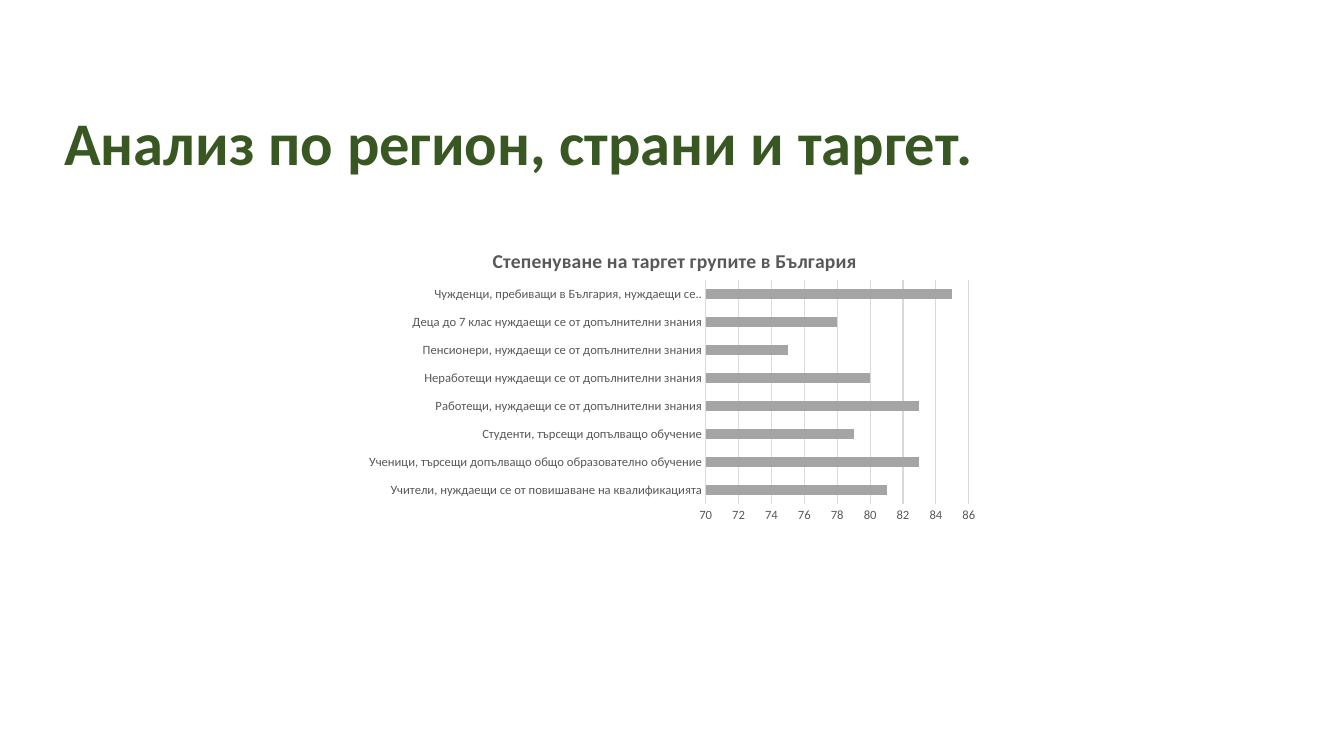
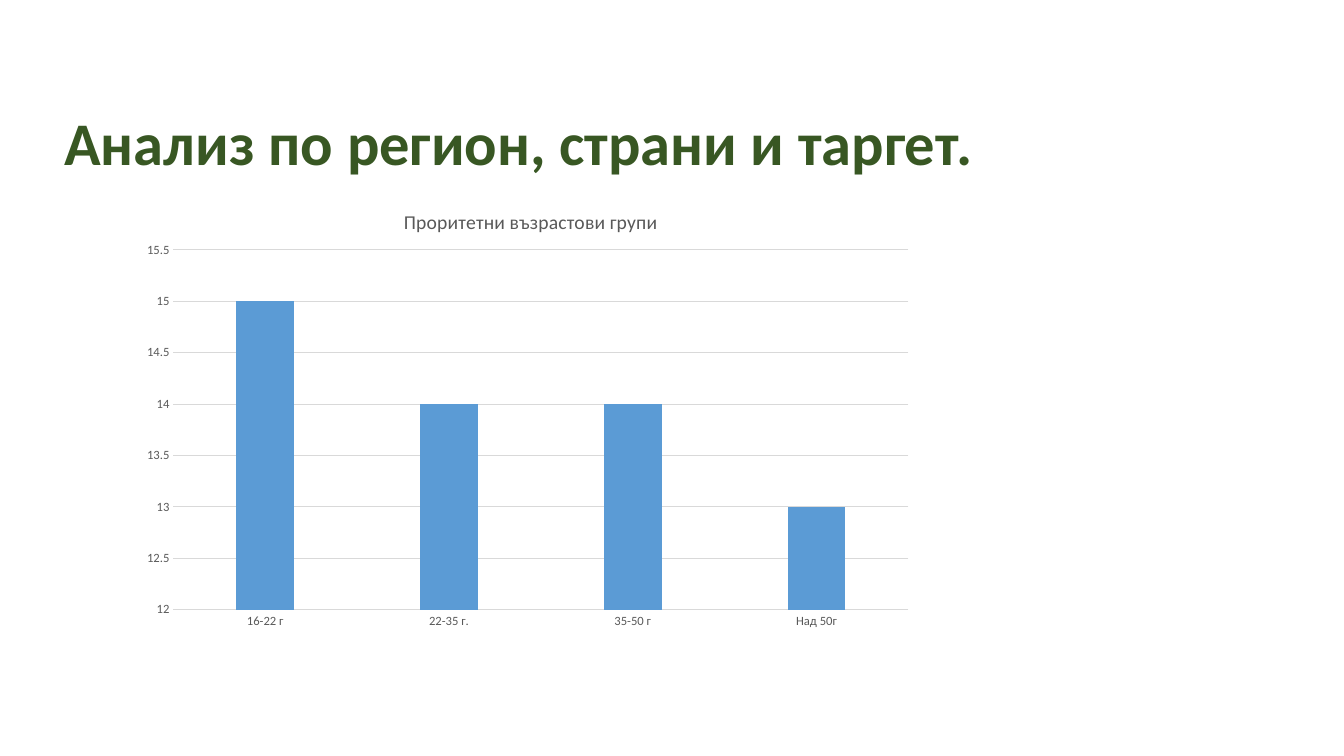
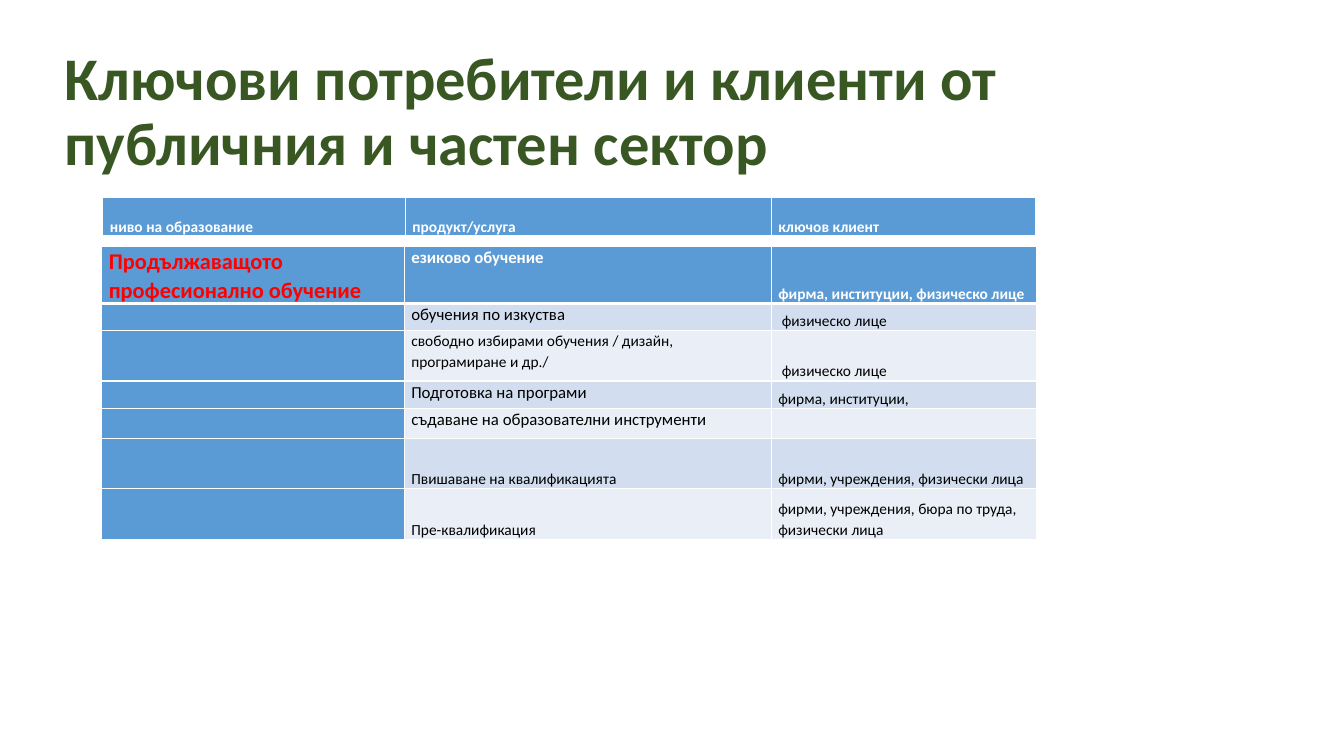
from pptx import Presentation
from pptx.chart.data import CategoryChartData
from pptx.dml.color import RGBColor
from pptx.enum.chart import XL_CHART_TYPE as ChartType, XL_TICK_MARK as TickMark
from pptx.enum.text import MSO_ANCHOR as Anchor
from pptx.oxml import parse_xml
from pptx.oxml.ns import nsdecls, qn
from pptx.util import Emu, Pt

PX = 9144  # 100 px to the inch
FONT = "Calibri"
COLORS = {
    "title": "385723", "white": "FFFFFF", "black": "000000", "red": "FF0000",
    "label": "595959", "grid": "D9D9D9", "gray": "A5A5A5", "blue": "5B9BD5",
    "band_dark": "D2DEEF", "band_light": "EAEFF7",
}
TITLE_BOX = (54, 100, 1113, 82)

CHART_SLIDES = [
    {
        "title": "Анализ по регион, страни и таргет.",
        "type": ChartType.BAR_CLUSTERED,
        "box": (354, 225, 626, 300),
        "plot": (700, 278, 261, 222),
        "caption": "Степенуване на таргет групите в България",
        "caption_at": (485, 242), "bold": True,
        "values": [
            ("Учители, нуждаещи се от повишаване на квалификацията", 81),
            ("Ученици, търсещи допълващо общо образователно обучение", 83),
            ("Студенти, търсещи допълващо обучение", 79),
            ("Работещи, нуждаещи се от допълнителни знания", 83),
            ("Неработещи нуждаещи се от допълнителни знания", 80),
            ("Пенсионери, нуждаещи се от допълнителни знания", 75),
            ("Деца до 7 клас нуждаещи се от допълнителни знания", 78),
            ("Чужденци, пребиващи в България, нуждаещи се..", 85),
        ],
        "scale": (70, 86, 2), "color": "gray", "gap": 182, "overlap": 0,
    },
    {
        "title": "Анализ по регион, страни и таргет.",
        "type": ChartType.COLUMN_CLUSTERED,
        "box": (130, 182, 787, 451),
        "plot": (172, 248, 729, 357),
        "caption": "Проритетни възрастови групи",
        "caption_at": (397, 203), "bold": False,
        "values": [("16-22 г", 15), ("22-35 г.", 14), ("35-50 г", 14), ("Над 50г", 13)],
        "scale": (12, 15.5, 0.5), "color": "blue", "gap": 219, "overlap": -27,
    },
]

TABLE_TITLE = "Ключови потребители и клиенти от публичния и частен сектор"
TOP, BOTTOM = Anchor.TOP, Anchor.BOTTOM
# A cell is (text, size, anchor).
EMPTY = ("", 11, BOTTOM)
TABLES = [
    {
        "at": (102, 196), "columns": (300, 363, 262), "heights": (39,),
        "rows": [[("ниво на образование", 11, BOTTOM), ("продукт/услуга", 11, BOTTOM),
                  ("ключов клиент", 11, BOTTOM)]],
    },
    {
        "at": (101, 244), "columns": (300, 364, 263),
        "heights": (48, 27, 50, 27, 30, 50, 50),
        "accent": "red",
        "rows": [
            [("Продължаващото професионално обучение", 16, BOTTOM),
             ("езиково обучение", 12, TOP),
             ("фирма, институции, физическо лице", 11, BOTTOM)],
            [EMPTY, ("обучения по изкуства", 12, TOP), (" физическо лице", 11, BOTTOM)],
            [EMPTY, ("свободно избирами обучения / дизайн, програмиране и др./", 11, TOP),
             (" физическо лице", 11, BOTTOM)],
            [EMPTY, ("Подготовка на програми", 12, TOP), ("фирма, институции,", 11, BOTTOM)],
            [EMPTY, ("съдаване на образователни инструменти", 12, TOP), EMPTY],
            [EMPTY, ("Пвишаване на квалификацията", 11, BOTTOM),
             ("фирми, учреждения, физически лица", 11, BOTTOM)],
            [EMPTY, ("Пре-квалификация", 11, BOTTOM),
             ("фирми, учреждения, бюра по труда, физически лица", 11, BOTTOM)],
        ],
    },
]


def px(*lengths):
    return [Emu(length * PX) for length in lengths]


def rgb(name):
    return RGBColor.from_string(COLORS[name])


def style_font(font, size, color, bold=False):
    font.name, font.size, font.bold = FONT, Pt(size), bold
    font.color.rgb = rgb(color)


def add_titled_slide(presentation, title):
    slide = presentation.slides.add_slide(presentation.slide_layouts[6])
    frame = slide.shapes.add_textbox(*px(*TITLE_BOX)).text_frame
    frame.word_wrap = True
    frame.vertical_anchor = BOTTOM
    paragraph = frame.paragraphs[0]
    paragraph.line_spacing = 0.9
    run = paragraph.add_run()
    run.text = title
    style_font(run.font, 43.2, "title", True)
    return slide


def set_layout(element, index, box, area, target=""):
    """Place a chart part at area (px on the slide) as fractions of the chart box."""
    old = element.find(qn("c:layout"))
    if old is not None:
        element.remove(old)
    left, top, width, height = box
    fractions = [("x", (area[0] - left) / width), ("y", (area[1] - top) / height)]
    if len(area) == 4:
        fractions += [("w", area[2] / width), ("h", area[3] / height)]
    modes = '<c:xMode val="edge"/><c:yMode val="edge"/>'
    places = "".join(f'<c:{key} val="{value:.4f}"/>' for key, value in fractions)
    element.insert(index, parse_xml(
        f'<c:layout {nsdecls("c")}><c:manualLayout>{target}{modes}{places}'
        "</c:manualLayout></c:layout>"))


def style_axis(axis):
    axis.major_tick_mark = axis.minor_tick_mark = TickMark.NONE
    style_font(axis.tick_labels.font, 9, "label")


def style_line(line):
    line.color.rgb = rgb("grid")
    line.width = Pt(0.75)


def add_bar_chart(slide, content):
    data = CategoryChartData()
    data.categories = [name for name, _ in content["values"]]
    data.add_series("Series 1", [value for _, value in content["values"]])
    box = content["box"]
    chart = slide.shapes.add_chart(content["type"], *px(*box), data).chart
    style_font(chart.font, 10, "black")
    chart.has_legend = False

    chart.has_title = True
    run = chart.chart_title.text_frame.paragraphs[0].add_run()
    run.text = content["caption"]
    style_font(run.font, 14, "label", content["bold"])
    chart.chart_title.include_in_layout = False
    title_element = chart.chart_title._element
    set_layout(title_element, 1, box, content["caption_at"])
    set_layout(chart._chartSpace.chart.plotArea, 0, box, content["plot"],
               '<c:layoutTarget val="inner"/>')

    style_axis(chart.category_axis)
    style_line(chart.category_axis.format.line)
    value_axis = chart.value_axis
    style_axis(value_axis)
    value_axis.format.line.fill.background()
    style_line(value_axis.major_gridlines.format.line)
    value_axis.minimum_scale, value_axis.maximum_scale, value_axis.major_unit = content["scale"]

    plot = chart.plots[0]
    plot.vary_by_categories = False
    plot.gap_width, plot.overlap = content["gap"], content["overlap"]
    fill = plot.series[0].format.fill
    fill.solid()
    fill.fore_color.rgb = rgb(content["color"])


def set_borders(cell, bottom_width):
    properties = cell._tc.get_or_add_tcPr()
    for index, side in enumerate("LRTB"):
        width = Pt(bottom_width if side == "B" else 1)
        properties.insert(index, parse_xml(
            f'<a:ln{side} {nsdecls("a")} w="{width}"><a:solidFill>'
            f'<a:srgbClr val="{COLORS["white"]}"/></a:solidFill></a:ln{side}>'))


def fill_cell(cell, content, fill, color, bold):
    text, size, anchor = content
    cell.margin_left, cell.margin_right, cell.margin_top, cell.margin_bottom = px(7, 7, 0, 0)
    cell.vertical_anchor = anchor
    cell.fill.solid()
    cell.fill.fore_color.rgb = rgb(fill)
    paragraph = cell.text_frame.paragraphs[0]
    paragraph.line_spacing = 1.07
    if text:
        run = paragraph.add_run()
        run.text = text
        style_font(run.font, size, color, bold)
    else:
        paragraph._p.append(parse_xml(f'<a:endParaRPr {nsdecls("a")} sz="{size * 100}"/>'))


def add_client_table(slide, content):
    columns, heights, rows = content["columns"], content["heights"], content["rows"]
    frame = slide.shapes.add_table(len(rows), len(columns),
                                   *px(*content["at"], sum(columns), sum(heights)))
    table = frame.table
    table.first_row = table.horz_banding = False
    for column, width in zip(table.columns, px(*columns)):
        column.width = width
    for row, height in zip(table.rows, px(*heights)):
        row.height = height
    for row_index, row in enumerate(rows):
        header = row_index == 0
        band = "band_dark" if row_index % 2 else "band_light"
        for column_index, cell_content in enumerate(row):
            first_column = column_index == 0
            color = "white" if header else "black"
            if header and first_column:
                color = content.get("accent", color)
            cell = table.cell(row_index, column_index)
            fill_cell(cell, cell_content, "blue" if header or first_column else band,
                      color, header)
            set_borders(cell, 3 if header else 1)


def main():
    presentation = Presentation()
    presentation.slide_width, presentation.slide_height = px(1333, 750)
    for content in CHART_SLIDES:
        add_bar_chart(add_titled_slide(presentation, content["title"]), content)
    table_slide = add_titled_slide(presentation, TABLE_TITLE)
    for content in TABLES:
        add_client_table(table_slide, content)
    presentation.save("out.pptx")


if __name__ == "__main__":
    main()
